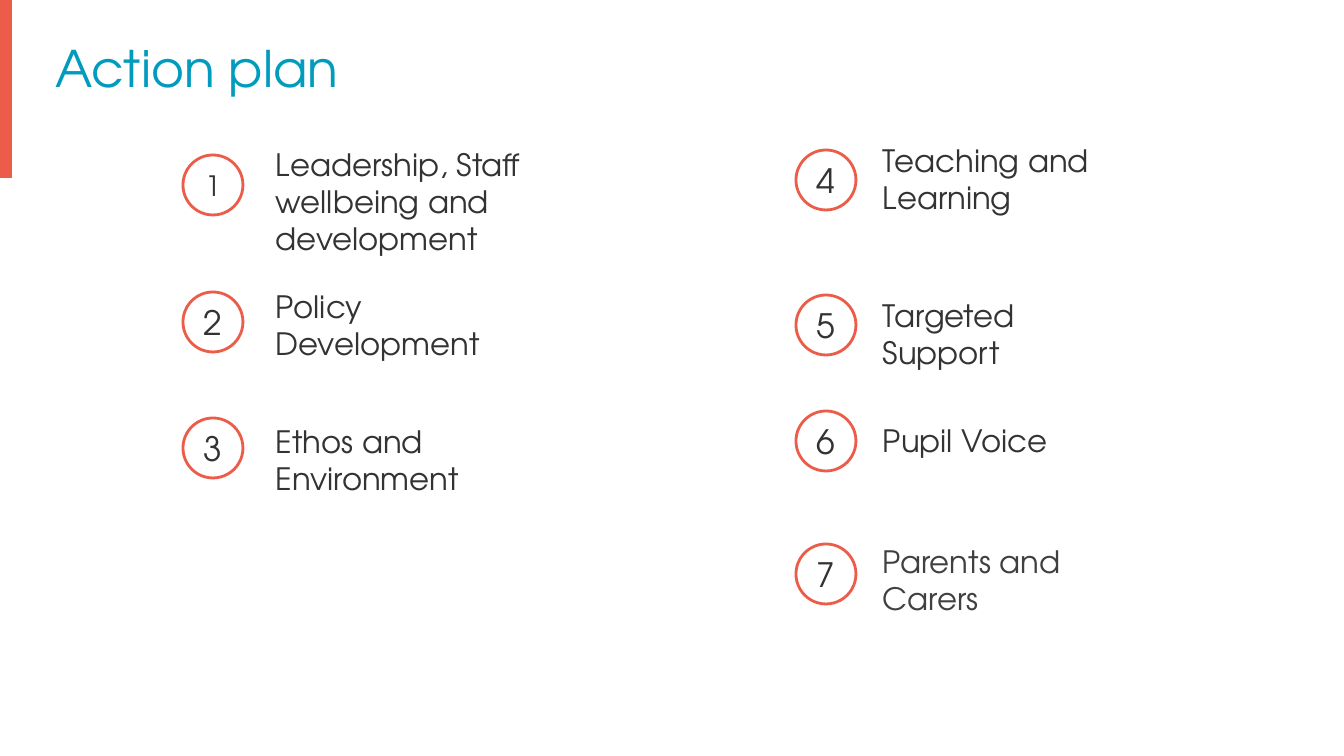
from pptx import Presentation
from pptx.dml.color import RGBColor
from pptx.enum.shapes import MSO_SHAPE as Shape
from pptx.enum.text import MSO_ANCHOR as Anchor, MSO_AUTO_SIZE as AutoSize, PP_ALIGN as Align
from pptx.util import Emu, Pt

FONT = "TeX Gyre Adventor"
CORAL, TEAL, WHITE, DARK, GREY = "EB5D49", "009BBD", "FFFFFF", "333333", "404040"
CIRCLE_SIZE, LABEL_WIDTH, LINE_HEIGHT, LABEL_PADDING = 60, 275, 37, 10


def px(length):
    return Emu(round(length * 914400 / 100.8))


def rgb(hex_colour):
    return RGBColor.from_string(hex_colour)


class ActionSlide:
    def __init__(self, presentation):
        self.slide = presentation.slides.add_slide(presentation.slide_layouts[5])

    def set_text(self, frame, text, size, colour, align=Align.LEFT, anchor=Anchor.TOP):
        frame.word_wrap = True
        frame.vertical_anchor = anchor
        frame.text = text
        paragraph = frame.paragraphs[0]
        paragraph.alignment = align
        paragraph.font.name = FONT
        paragraph.font.size = Pt(size)
        paragraph.font.color.rgb = rgb(colour)

    def title(self, text, left, top, width, height):
        heading = self.slide.shapes.title
        heading.left, heading.top = px(left), px(top)
        heading.width, heading.height = px(width), px(height)
        self.set_text(heading.text_frame, text, 36, TEAL)
        heading.text_frame.auto_size = AutoSize.NONE

    def preset(self, kind, left, top, width, height, fill):
        shape = self.slide.shapes.add_shape(kind, px(left), px(top), px(width), px(height))
        shape.shadow.inherit = False
        shape.fill.solid()
        shape.fill.fore_color.rgb = rgb(fill)
        shape.line.fill.background()
        return shape

    def number(self, value, left, top, size):
        circle = self.preset(Shape.OVAL, left, top, CIRCLE_SIZE, CIRCLE_SIZE, WHITE)
        circle.line.color.rgb = rgb(CORAL)
        circle.line.width = Pt(2)
        frame = circle.text_frame
        frame.margin_left = frame.margin_right = frame.margin_top = frame.margin_bottom = 0
        self.set_text(frame, str(value), size, DARK, Align.CENTER, Anchor.MIDDLE)

    def label(self, text, left, top, lines, colour):
        height = lines * LINE_HEIGHT + LABEL_PADDING
        box = self.slide.shapes.add_textbox(px(left), px(top), px(LABEL_WIDTH), px(height))
        self.set_text(box.text_frame, text, 22, colour)
        box.text_frame.auto_size = AutoSize.SHAPE_TO_FIT_TEXT


def main():
    presentation = Presentation()
    presentation.slide_width, presentation.slide_height = px(1344), px(756)
    plan = ActionSlide(presentation)
    plan.title("Action plan", 45, 32, 1190, 80)
    plan.preset(Shape.RECTANGLE, 0, 0, 12, 178, CORAL)

    # Each column: circle left, label left, then
    # (text, circle top, label top, lines, number size, label colour)
    columns = [
        (183, 266, [
            ("Leadership, Staff wellbeing and development", 155, 141, 3, 20, DARK),
            ("Policy Development", 292, 283, 2, 24, DARK),
            ("Ethos and Environment", 418, 418, 2, 24, DARK),
        ]),
        (796, 873, [
            ("Teaching and Learning", 150, 137, 2, 24, DARK),
            ("Targeted Support", 295, 292, 2, 24, DARK),
            ("Pupil Voice", 411, 417, 1, 24, DARK),
            ("Parents and Carers", 544, 538, 2, 24, GREY),
        ]),
    ]
    step = 0
    for circle_left, label_left, actions in columns:
        for text, circle_top, label_top, lines, number_size, colour in actions:
            step += 1
            plan.number(step, circle_left, circle_top, number_size)
            plan.label(text, label_left, label_top, lines, colour)

    presentation.save("out.pptx")


if __name__ == "__main__":
    main()
